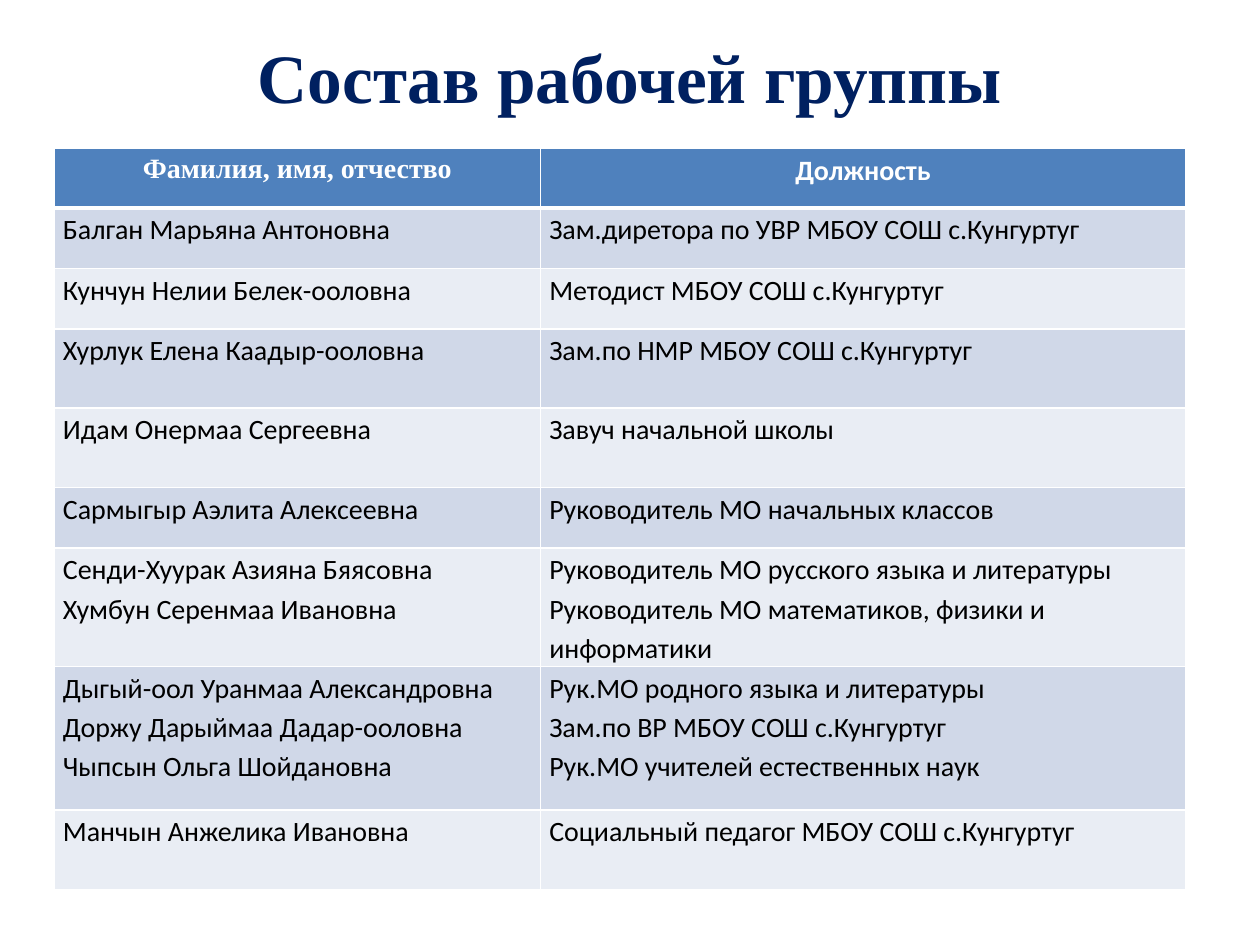
"""Build a slide with the members of a working group in a two-column table."""
from lxml.etree import SubElement
from pptx import Presentation
from pptx.dml.color import RGBColor
from pptx.enum.text import MSO_ANCHOR, MSO_AUTO_SIZE, PP_ALIGN
from pptx.oxml.ns import qn
from pptx.util import Inches, Pt

COLORS = {
    "title": "002060",
    "header": "4F81BD",
    "odd": "D0D8E8",
    "even": "E9EDF4",
    "text": "000000",
    "white": "FFFFFF",
}
ROWS = [
    (0.47, "Фамилия, имя, отчество", "Должность"),
    (0.48, "Балган Марьяна Антоновна", "Зам.диретора по УВР МБОУ СОШ с.Кунгуртуг"),
    (0.48, "Кунчун Нелии Белек-ооловна", "Методист МБОУ СОШ с.Кунгуртуг"),
    (0.63, "Хурлук Елена Каадыр-ооловна", "Зам.по НМР МБОУ СОШ с.Кунгуртуг"),
    (0.63, "Идам Онермаа Сергеевна", "Завуч начальной школы"),
    (0.48, "Сармыгыр Аэлита Алексеевна", "Руководитель МО начальных классов"),
    (0.94, "Сенди-Хуурак Азияна Бяясовна\nХумбун Серенмаа Ивановна",
     "Руководитель МО русского языка и литературы\n"
     "Руководитель МО математиков, физики и информатики"),
    (1.14, "Дыгый-оол Уранмаа Александровна\nДоржу Дарыймаа Дадар-ооловна\n"
     "Чыпсын Ольга Шойдановна",
     "Рук.МО родного языка и литературы\nЗам.по ВР МБОУ СОШ с.Кунгуртуг\n"
     "Рук.МО учителей естественных наук"),
    (0.63, "Манчын Анжелика Ивановна", "Социальный педагог МБОУ СОШ с.Кунгуртуг"),
]
COLUMN_WIDTHS = [3.86, 5.12]


def write_text(frame, text, size=16, font="Calibri", color="text", bold=False,
               align=PP_ALIGN.LEFT, spacing=1.15):
    frame.text = text
    frame.word_wrap = True
    for paragraph in frame.paragraphs:
        paragraph.alignment = align
        paragraph.line_spacing = spacing
        for run in paragraph.runs:
            run.font.size = Pt(size)
            run.font.name = font
            run.font.bold = bold
            run.font.color.rgb = RGBColor.from_string(COLORS[color])


def add_border(cell, side, width):
    line = SubElement(cell._tc.get_or_add_tcPr(), qn(f"a:ln{side}"), w=str(Pt(width)))
    fill = SubElement(line, qn("a:solidFill"))
    SubElement(fill, qn("a:srgbClr"), val=COLORS["white"])


presentation = Presentation()
presentation.slide_width = Inches(10)
presentation.slide_height = Inches(7.5)
slide = presentation.slides.add_slide(presentation.slide_layouts[5])

title = slide.shapes.title
title.left = int(presentation.slide_width * 0.05)
title.top = int(presentation.slide_height * 0.04)
title.width = int(presentation.slide_width * 0.9)
title.height = Inches(0.54)
title_frame = title.text_frame
title_frame.auto_size = MSO_AUTO_SIZE.NONE
title_frame.vertical_anchor = MSO_ANCHOR.MIDDLE
title_frame.margin_top = Inches(0.12)
write_text(title_frame, "Состав рабочей группы", size=39.6, font="Times New Roman",
           color="title", bold=True, align=PP_ALIGN.CENTER, spacing=1.0)

table = slide.shapes.add_table(
    len(ROWS), len(COLUMN_WIDTHS), Inches(0.43), Inches(1.18),
    Inches(sum(COLUMN_WIDTHS)), Inches(sum(row[0] for row in ROWS)),
).table
for column, width in zip(table.columns, COLUMN_WIDTHS):
    column.width = Inches(width)

for row_index, (height, *texts) in enumerate(ROWS):
    table.rows[row_index].height = Inches(height)
    is_header = row_index == 0
    fill_name = "header" if is_header else "odd" if row_index % 2 else "even"
    for column_index, text in enumerate(texts):
        cell = table.cell(row_index, column_index)
        cell.margin_left = cell.margin_right = Inches(0.07)
        cell.margin_top = cell.margin_bottom = 0
        for side in "LRTB":
            below_header = (row_index, side) in [(0, "B"), (1, "T")]
            add_border(cell, side, 3 if below_header else 1)
        cell.fill.solid()
        cell.fill.fore_color.rgb = RGBColor.from_string(COLORS[fill_name])
        write_text(
            cell.text_frame, text, bold=is_header,
            font="Times New Roman" if is_header and column_index == 0 else "Calibri",
            color="white" if is_header else "text",
            align=PP_ALIGN.CENTER if is_header else PP_ALIGN.LEFT,
        )

presentation.save("out.pptx")
